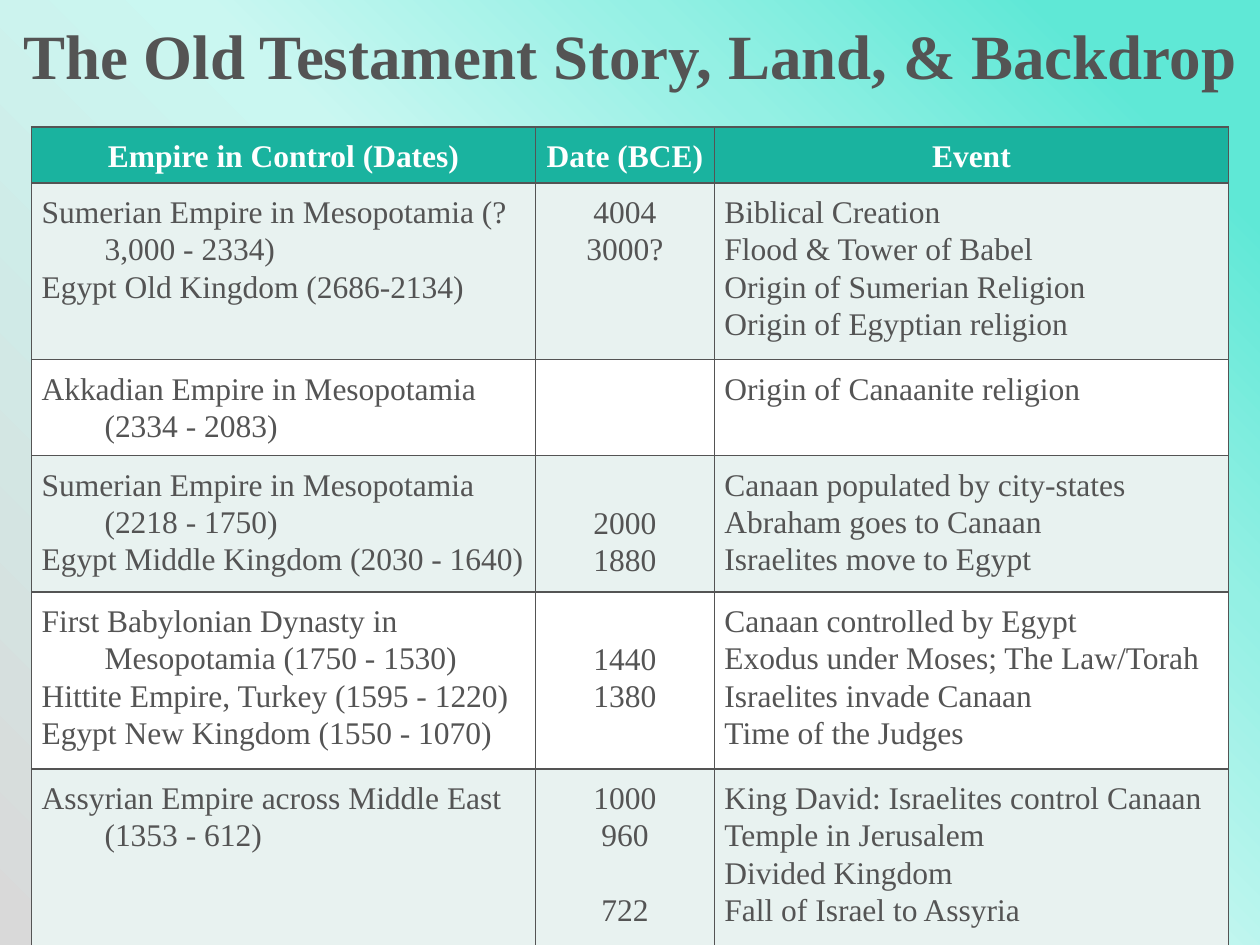
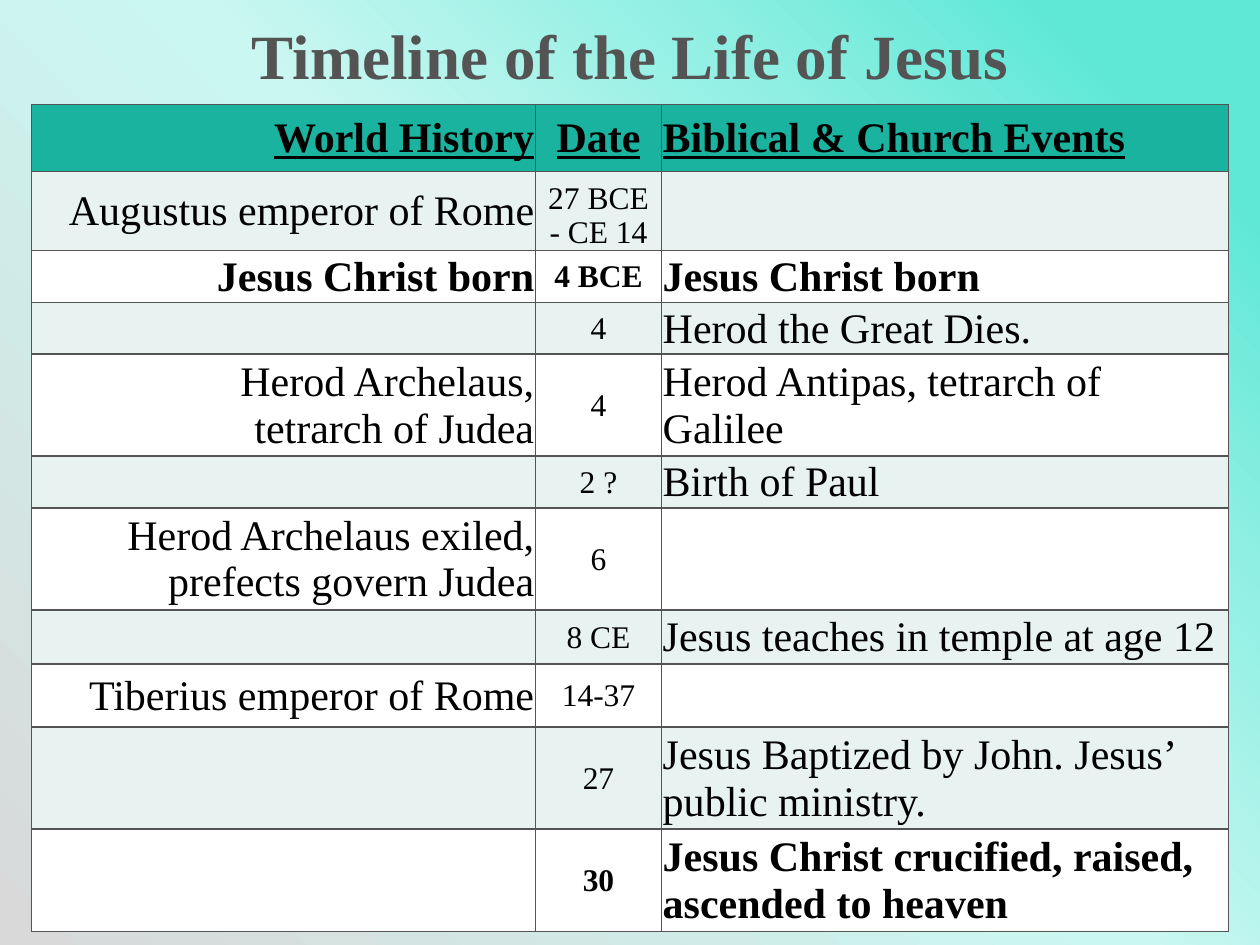
import pptx
import pptx.util
import pptx.oxml
import pptx.oxml.ns
from pptx.dml.color import RGBColor
from pptx.enum.text import MSO_ANCHOR, PP_ALIGN
from pptx.util import Inches, Pt

FONT = "Times New Roman"
GREY = RGBColor(0x54, 0x54, 0x54)
TEAL = RGBColor(0x1A, 0xB3, 0x9F)
MINT = RGBColor(0xE8, 0xF2, 0xF0)
WHITE = RGBColor(0xFF, 0xFF, 0xFF)
BLACK = RGBColor(0x00, 0x00, 0x00)
BACKDROP_STOPS = [
    (10, RGBColor(0x5F, 0xE8, 0xD6)),
    (28, RGBColor(0x94, 0xF0, 0xE4)),
    (48, RGBColor(0xCA, 0xF7, 0xF1)),
    (100, RGBColor(0xD9, 0xD9, 0xD9)),
]
NS = pptx.oxml.ns.nsdecls("a")

LINE = 0.3
LEAD = 0.08
HANG = Inches(0.5)
EMPIRE_MARGINS = {"margin_left": Inches(0.08), "margin_right": Inches(0.08),
                  "margin_top": Inches(LEAD), "margin_bottom": Inches(0.04)}
LIFE_MARGINS = {"margin_left": Inches(0.01), "margin_right": Inches(0.01),
                "margin_top": Inches(0.01), "margin_bottom": 0,
                "vertical_anchor": MSO_ANCHOR.MIDDLE}

EMPIRE_HEADS = ["Empire in Control (Dates)", "Date (BCE)", "Event"]
EMPIRE_ERAS = [
    (["Sumerian Empire in Mesopotamia (?3,000 - 2334)", "Egypt Old Kingdom (2686-2134)"],
     ["4004", "3000?"],
     ["Biblical Creation", "Flood & Tower of Babel",
      "Origin of Sumerian Religion", "Origin of Egyptian religion"]),
    (["Akkadian Empire in Mesopotamia (2334 - 2083)"],
     [],
     ["Origin of Canaanite religion"]),
    (["Sumerian Empire in Mesopotamia (2218 - 1750)", "Egypt Middle Kingdom (2030 - 1640)"],
     [None, "2000", "1880"],
     ["Canaan populated by city-states", "Abraham goes to Canaan", "Israelites move to Egypt"]),
    (["First Babylonian Dynasty in Mesopotamia (1750 - 1530)",
      "Hittite Empire, Turkey (1595 - 1220)", "Egypt New Kingdom (1550 - 1070)"],
     [None, "1440", "1380"],
     ["Canaan controlled by Egypt", "Exodus under Moses; The Law/Torah",
      "Israelites invade Canaan", "Time of the Judges"]),
    (["Assyrian Empire across Middle East (1353 - 612)"],
     ["1000", "960", None, "722"],
     ["King David: Israelites control Canaan", "Temple in Jerusalem",
      "Divided Kingdom", "Fall of Israel to Assyria"]),
]
EMPIRE_HEIGHTS = [0.41, 1.37, 0.73, 1.04, 1.37, 1.37]

LIFE_ROWS = [
    ("World History", "Date", "Biblical & Church Events"),
    ("Augustus emperor of Rome", "27 BCE\v- CE 14", ""),
    ("Jesus Christ born", "4 BCE", "Jesus Christ born"),
    ("", "4", "Herod the Great Dies."),
    ("Herod Archelaus,\vtetrarch of Judea", "4", "Herod Antipas, tetrarch of Galilee"),
    ("", "2 ?", "Birth of Paul"),
    ("Herod Archelaus exiled, prefects govern Judea", "6", ""),
    ("", "8 CE", "Jesus teaches in temple at age 12"),
    ("Tiberius emperor of Rome", "14-37", ""),
    ("", "27", "Jesus Baptized by John. Jesus’ public ministry."),
    ("", "30", "Jesus Christ crucified, raised, ascended to heaven"),
]
LIFE_HEIGHTS = [0.53, 0.63, 0.41, 0.41, 0.81, 0.41, 0.81, 0.43, 0.5, 0.81, 0.81]
LIFE_BOLD_ROWS = {0, 2, 10}
LIFE_ALIGNMENTS = [PP_ALIGN.RIGHT, PP_ALIGN.CENTER, PP_ALIGN.LEFT]


def apply(target, formats):
    """Set each attribute in formats on the target."""
    for name, value in formats.items():
        setattr(target, name, value)


def write(paragraph, text, size, color, alignment, **formats):
    """Fill a paragraph with text in the shared font."""
    paragraph.text = text
    paragraph.alignment = alignment
    for run in paragraph.runs:
        apply(run.font, {"name": FONT, "size": Pt(size), **formats})
        run.font.color.rgb = color


def paint_backdrop(slide):
    """Spread the gradient from the top right corner of the slide."""
    slide.background.fill.solid()
    stops = "".join(f'<a:gs pos="{pos * 1000}"><a:srgbClr val="{color}"/></a:gs>'
                    for pos, color in BACKDROP_STOPS)
    gradient = pptx.oxml.parse_xml(
        f'<a:gradFill {NS} rotWithShape="1"><a:gsLst>{stops}</a:gsLst>'
        '<a:path path="circle"><a:fillToRect l="100000" b="100000"/></a:path></a:gradFill>')
    properties = slide._element.find(".//" + pptx.oxml.ns.qn("p:bgPr"))
    properties.replace(properties[0], gradient)


def add_titled_slide(deck, title):
    """Add a slide with the shared backdrop and title."""
    slide = deck.slides.add_slide(deck.slide_layouts[6])
    paint_backdrop(slide)
    heading = slide.shapes.add_textbox(0, Inches(0.08), deck.slide_width, Inches(0.71))
    heading.text_frame.word_wrap = True
    write(heading.text_frame.paragraphs[0], title, 36, GREY, PP_ALIGN.CENTER, bold=True)
    return slide


def rule_cell(cell):
    """Draw a thin grey line on every side of a cell."""
    properties = cell._tc.get_or_add_tcPr()
    for side in ("lnL", "lnR", "lnT", "lnB"):
        properties.append(pptx.oxml.parse_xml(
            f'<a:{side} {NS} w="12700"><a:solidFill><a:srgbClr val="{GREY}"/>'
            f'</a:solidFill></a:{side}>'))


def add_grid(slide, left, top, widths, heights, margins):
    """Add a ruled table with a teal head and alternating rows."""
    grid = slide.shapes.add_table(
        len(heights), len(widths), Inches(left), Inches(top),
        Inches(sum(widths)), Inches(sum(heights))).table
    for column, width in zip(grid.columns, widths):
        column.width = Inches(width)
    for index, (row, height) in enumerate(zip(grid.rows, heights)):
        row.height = Inches(height)
        for cell in row.cells:
            rule_cell(cell)
            apply(cell, margins)
            cell.fill.solid()
            cell.fill.fore_color.rgb = TEAL if index == 0 else MINT if index % 2 else WHITE
    return grid


def write_lines(cell, lines, alignment, color=GREY, bold=False, hanging=False):
    """Write one paragraph per line, leaving space where a line is None."""
    paragraph, skipped = None, 0
    for line in lines:
        if line is None:
            skipped += 1
            continue
        if paragraph is None:
            paragraph = cell.text_frame.paragraphs[0]
            cell.margin_top = Inches(LEAD + LINE * skipped)
        else:
            paragraph.space_after = Inches(LINE * skipped)
            paragraph = cell.text_frame.add_paragraph()
        skipped = 0
        write(paragraph, line, 18, color, alignment, bold=bold)
        paragraph.line_spacing = 1.07
        if hanging:
            properties = paragraph._p.get_or_add_pPr()
            properties.set("marL", str(HANG))
            properties.set("indent", str(-HANG))


def add_empires_table(slide, left, top):
    """Set empires, dates and events side by side."""
    grid = add_grid(slide, left, top, [4, 1.42, 4.08], EMPIRE_HEIGHTS, EMPIRE_MARGINS)
    for column, head in enumerate(EMPIRE_HEADS):
        write_lines(grid.cell(0, column), [head], PP_ALIGN.CENTER, WHITE, True)
    for row, (empires, dates, events) in enumerate(EMPIRE_ERAS, 1):
        write_lines(grid.cell(row, 0), empires, PP_ALIGN.LEFT, hanging=True)
        write_lines(grid.cell(row, 1), dates, PP_ALIGN.CENTER)
        write_lines(grid.cell(row, 2), events, PP_ALIGN.LEFT)


def add_life_table(slide, left, top):
    """Set world history and church events on either side of the date."""
    grid = add_grid(slide, left, top, [4, 1, 4.5], LIFE_HEIGHTS, LIFE_MARGINS)
    for row, entries in enumerate(LIFE_ROWS):
        for column, entry in enumerate(entries):
            size = 18 if column == 1 and row else 24
            write(grid.cell(row, column).text_frame.paragraphs[0], entry, size, BLACK,
                  LIFE_ALIGNMENTS[column], bold=row in LIFE_BOLD_ROWS, underline=row == 0)
    grid.cell(1, 1).vertical_anchor = MSO_ANCHOR.BOTTOM


def main():
    """Build both slides and save the deck."""
    deck = pptx.Presentation()
    deck.slide_width, deck.slide_height = Inches(10), Inches(7.5)
    empires = add_titled_slide(deck, "The Old Testament Story, Land, & Backdrop")
    add_empires_table(empires, 0.25, 1.01)
    life = add_titled_slide(deck, "Timeline of the Life of Jesus")
    add_life_table(life, 0.25, 0.83)
    deck.save("out.pptx")


if __name__ == "__main__":
    main()
